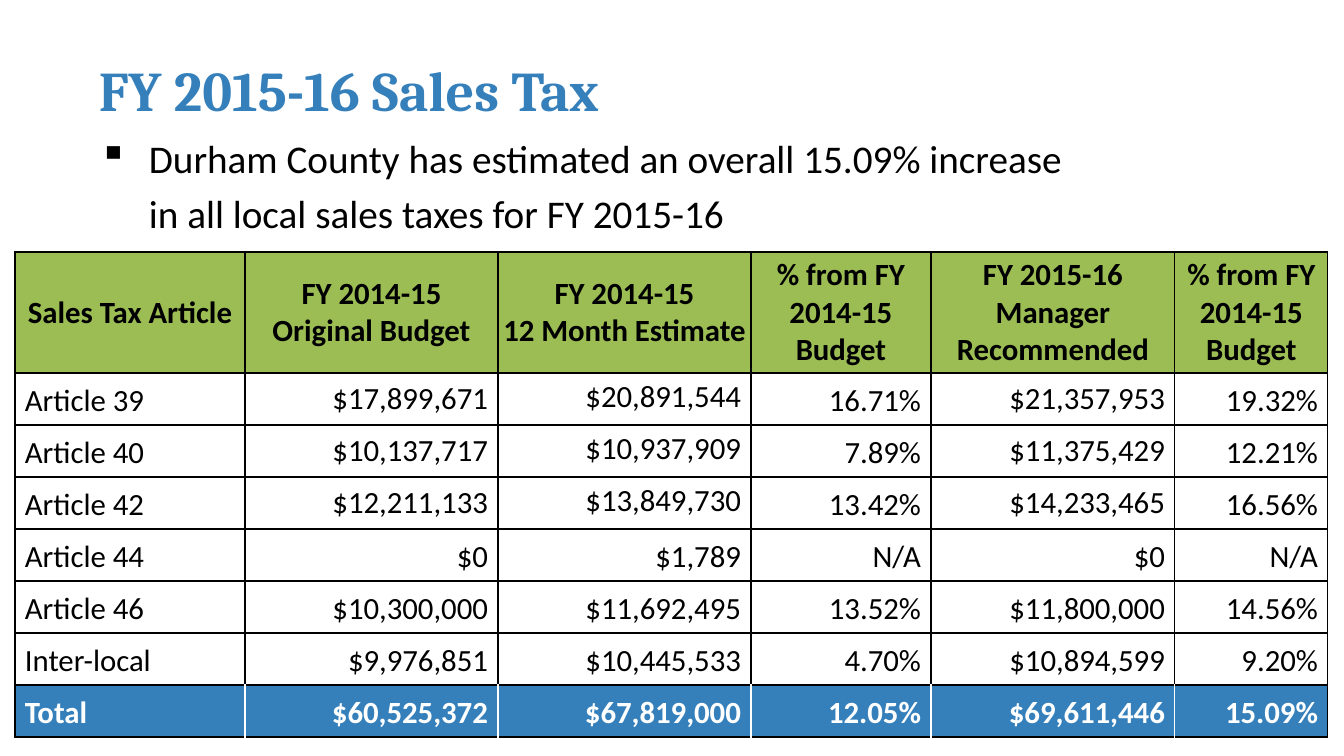
from dataclasses import dataclass

from lxml.etree import SubElement
from pptx import Presentation
from pptx.dml.color import RGBColor
from pptx.enum.text import MSO_ANCHOR as ANCHOR, PP_ALIGN as ALIGN
from pptx.oxml.ns import qn
from pptx.util import Pt

PX = 914400 / 100.8


@dataclass(frozen=True)
class Theme:
    blue: str = "3580BB"
    green: str = "9CBD53"
    black: str = "000000"
    white: str = "FFFFFF"
    heading_font: str = "Cambria"
    body_font: str = "Calibri"
    title_size: int = 40
    body_size: int = 28
    table_size: int = 22


THEME = Theme()


def px(length):
    return round(length * PX)


def add_run(paragraph, text, size, color, bold=False, face=THEME.body_font):
    run = paragraph.add_run()
    run.text = text
    run.font.name = face
    run.font.size = Pt(size)
    run.font.bold = bold
    run.font.color.rgb = RGBColor.from_string(color)


prs = Presentation()
prs.slide_width, prs.slide_height = px(1344), px(756)
slide = prs.slides.add_slide(prs.slide_layouts[6])

# Title
title = slide.shapes.add_textbox(px(89), px(26), px(1210), px(126)).text_frame
title.word_wrap = True
title.vertical_anchor = ANCHOR.MIDDLE
add_run(title.paragraphs[0], "FY 2015-16 Sales Tax", THEME.title_size,
        THEME.blue, True, THEME.heading_font)

# Summary: a bulleted line and its continuation
summary = slide.shapes.add_textbox(px(89), px(129), px(1210), px(100)).text_frame
summary.word_wrap = True
summary_lines = ["Durham County has estimated an overall 15.09% increase",
                 "in all local sales taxes for FY 2015-16"]
for i, line in enumerate(summary_lines):
    paragraph = summary.add_paragraph() if i else summary.paragraphs[0]
    props = paragraph._p.get_or_add_pPr()
    props.set("marL", str(px(50)))
    if i:
        props.set("indent", "0")
        SubElement(props, qn("a:buNone"))
        paragraph.space_before = Pt(THEME.body_size * 0.2)
    else:
        props.set("indent", str(-px(50)))
        SubElement(props, qn("a:buChar"), char="▪")
    add_run(paragraph, line, THEME.body_size, THEME.black)

# Sales tax table
sales_tax = [
    ["Sales Tax Article", "FY 2014-15 Original Budget",
     "FY 2014-15\n12 Month Estimate", "% from FY 2014-15 Budget",
     "FY 2015-16 Manager Recommended", "% from FY 2014-15 Budget"],
    ["Article 39", "$17,899,671", "$20,891,544", "16.71%", "$21,357,953", "19.32%"],
    ["Article 40", "$10,137,717", "$10,937,909", "7.89%", "$11,375,429", "12.21%"],
    ["Article 42", "$12,211,133", "$13,849,730", "13.42%", "$14,233,465", "16.56%"],
    ["Article 44", "$0", "$1,789", "N/A", "$0", "N/A"],
    ["Article 46", "$10,300,000", "$11,692,495", "13.52%", "$11,800,000", "14.56%"],
    ["Inter-local", "$9,976,851", "$10,445,533", "4.70%", "$10,894,599", "9.20%"],
    ["Total", "$60,525,372", "$67,819,000", "12.05%", "$69,611,446", "15.09%"],
]
column_widths = [230, 253, 253, 180, 244, 153]
row_heights = [121] + [52] * 7
last_row, last_column = len(sales_tax) - 1, len(column_widths) - 1
upper_anchors = [ANCHOR.BOTTOM, ANCHOR.MIDDLE, ANCHOR.TOP,
                 ANCHOR.BOTTOM, ANCHOR.MIDDLE, ANCHOR.BOTTOM]

table = slide.shapes.add_table(
    len(row_heights), len(column_widths), px(15), px(252),
    px(sum(column_widths)), px(sum(row_heights))).table
for column, width in zip(table.columns, column_widths):
    column.width = px(width)
for row, height in zip(table.rows, row_heights):
    row.height = px(height)

for r, entries in enumerate(sales_tax):
    is_header, is_total = r == 0, r == last_row
    for c, entry in enumerate(entries):
        cell = table.cell(r, c)
        cell.margin_left = cell.margin_right = px(5 if is_header else 10)
        cell.margin_top = cell.margin_bottom = px(0 if is_header else 5)
        if is_header:
            cell.vertical_anchor = ANCHOR.MIDDLE
        else:
            cell.vertical_anchor = upper_anchors[c] if r <= 3 else ANCHOR.BOTTOM

        # Inner verticals of the total row are white, all other borders black
        inner_sides = {"L": c > 0, "R": c < last_column, "T": False, "B": False}
        for side, is_inner in inner_sides.items():
            border = SubElement(cell._tc.get_or_add_tcPr(), qn(f"a:ln{side}"),
                                w=str(Pt(1)))
            color = THEME.white if is_total and is_inner else THEME.black
            SubElement(SubElement(border, qn("a:solidFill")), qn("a:srgbClr"), val=color)

        if is_header or is_total:
            cell.fill.solid()
            cell.fill.fore_color.rgb = RGBColor.from_string(
                THEME.green if is_header else THEME.blue)
        else:
            cell.fill.background()

        for i, line in enumerate(entry.split("\n")):
            frame = cell.text_frame
            paragraph = frame.add_paragraph() if i else frame.paragraphs[0]
            if is_header:
                paragraph.alignment = ALIGN.CENTER
            else:
                paragraph.alignment = ALIGN.RIGHT if c else ALIGN.LEFT
            add_run(paragraph, line, THEME.table_size,
                    THEME.white if is_total else THEME.black, is_header or is_total)

prs.save("out.pptx")
